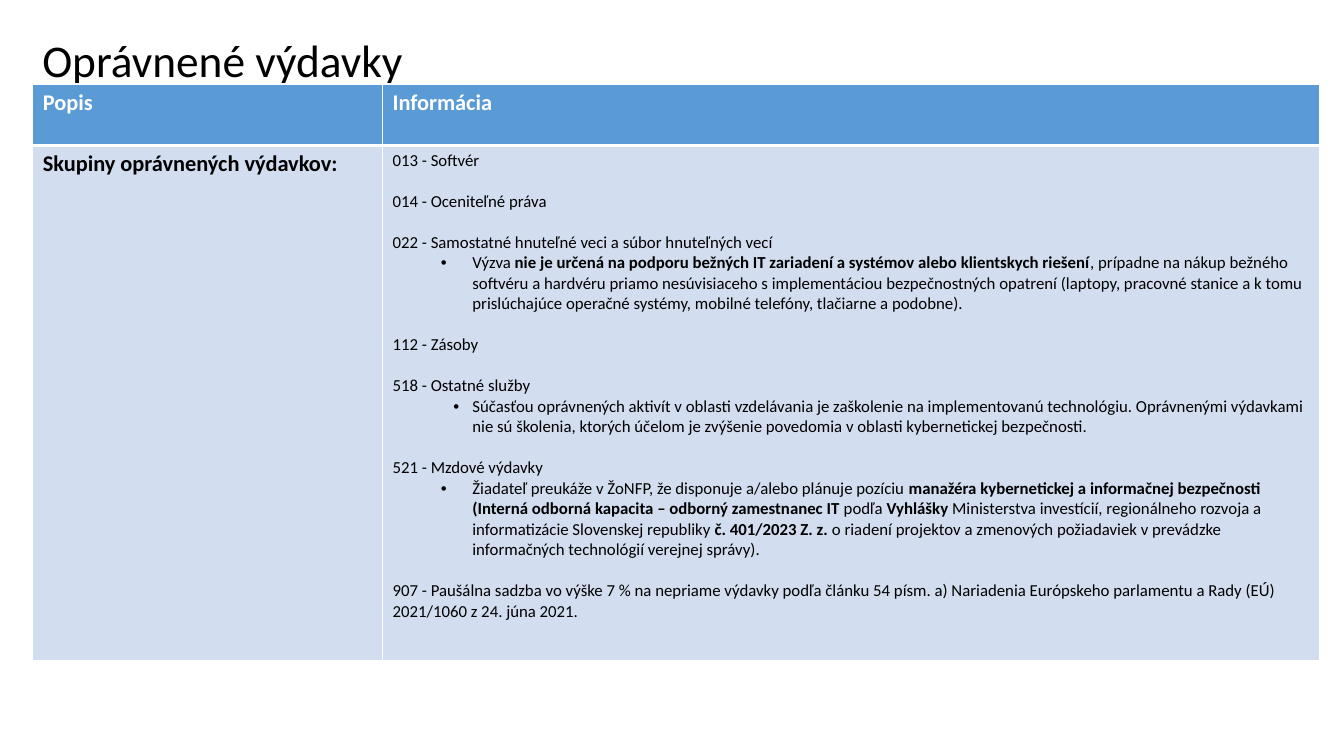
from lxml import etree
from pptx import Presentation
from pptx.dml.color import RGBColor
from pptx.enum.text import MSO_ANCHOR, PP_ALIGN
from pptx.oxml.ns import qn
from pptx.util import Pt

MIDDLE = MSO_ANCHOR.MIDDLE
LEFT = PP_ALIGN.LEFT
JUSTIFY = PP_ALIGN.JUSTIFY
TITLE_ONLY = 5
FONT = "Calibri"
COLOURS = {"black": "000000", "white": "FFFFFF", "header": "5B9BD5", "body": "D2DEEF"}
BLANK_LINE = 14.65
WIDE_BULLET, NARROW_BULLET = 22.5, 13.5
BULLET_INDENT = 57

# Each expense group: heading, bullet hang, bullet spans as (text, bold).
EXPENSE_GROUPS = [
    ("013 - Softvér", 0, []),
    ("014 - Oceniteľné práva", 0, []),
    ("022 - Samostatné hnuteľné veci a súbor hnuteľných vecí", WIDE_BULLET, [
        ("Výzva ", False),
        ("nie je určená na podporu bežných IT zariadení a systémov alebo "
         "klientskych riešení", True),
        (", prípadne na nákup bežného softvéru a hardvéru priamo nesúvisiaceho "
         "s implementáciou bezpečnostných opatrení (laptopy, pracovné stanice a k tomu "
         "prislúchajúce operačné systémy, mobilné telefóny, tlačiarne a podobne).", False),
    ]),
    ("112 - Zásoby", 0, []),
    ("518 - Ostatné služby", NARROW_BULLET, [
        ("Súčasťou oprávnených aktivít v oblasti vzdelávania je zaškolenie na "
         "implementovanú technológiu. Oprávnenými výdavkami nie sú školenia, ktorých "
         "účelom je zvýšenie povedomia v oblasti kybernetickej bezpečnosti.", False),
    ]),
    ("521 - Mzdové výdavky", WIDE_BULLET, [
        ("Žiadateľ preukáže v ŽoNFP, že disponuje a/alebo plánuje pozíciu ", False),
        ("manažéra kybernetickej a informačnej bezpečnosti (Interná odborná kapacita – "
         "odborný zamestnanec IT ", True),
        ("podľa ", False),
        ("Vyhlášky", True),
        (" Ministerstva investícií, regionálneho rozvoja a informatizácie Slovenskej "
         "republiky ", False),
        ("č. 401/2023 Z. z. ", True),
        ("o riadení projektov a zmenových požiadaviek v prevádzke informačných "
         "technológií verejnej správy).", False),
    ]),
    ("907 - Paušálna sadzba vo výške 7 % na nepriame výdavky podľa článku 54 písm. a) "
     "Nariadenia Európskeho parlamentu a Rady (EÚ) 2021/1060 z 24. júna 2021.", 0, []),
]


def colour(name):
    return RGBColor.from_string(COLOURS[name])


def write(para, spans, size, colour_name, align=LEFT):
    """Fill a paragraph with (text, bold) spans."""
    para.alignment = align
    para.font.name = FONT
    para.font.size = Pt(size)
    para.font.color.rgb = colour(colour_name)
    for text, bold in spans:
        span = para.add_run()
        span.text = text
        # Run-level settings take precedence over the table style.
        span.font.bold = bold
        span.font.name = FONT
        span.font.size = Pt(size)
        span.font.color.rgb = colour(colour_name)


def add_bullet(para, hang):
    properties = para._p.get_or_add_pPr()
    properties.set("marL", str(Pt(BULLET_INDENT)))
    properties.set("indent", str(-Pt(hang)))
    typeface = etree.SubElement(properties, qn("a:buFont"), typeface="Arial")
    typeface.addnext(etree.Element(qn("a:buChar"), char="•"))
    defaults = properties.find(qn("a:defRPr"))
    if defaults is not None:
        properties.append(defaults)


def style_cell(cell, fill, bottom_width=1):
    """Give a cell a solid fill and white borders."""
    cell.fill.solid()
    cell.fill.fore_color.rgb = colour(fill)
    properties = cell._tc.get_or_add_tcPr()
    widths = {"lnL": 1, "lnR": 1, "lnT": 1, "lnB": bottom_width}
    for place, (side, width) in enumerate(widths.items()):
        line = etree.Element(qn(f"a:{side}"), w=str(Pt(width)))
        solid = etree.SubElement(line, qn("a:solidFill"))
        etree.SubElement(solid, qn("a:srgbClr"), val=COLOURS["white"])
        properties.insert(place, line)


def set_title(page, text):
    title = page.shapes.title
    title.left, title.top, title.width, title.height = Pt(23), Pt(23), Pt(720), Pt(37)
    frame = title.text_frame
    frame.word_wrap = True
    frame.vertical_anchor = MIDDLE
    frame.margin_top, frame.margin_bottom = Pt(10), Pt(3.6)
    para = frame.paragraphs[0]
    para.line_spacing = 0.9
    write(para, [(text, False)], 32.4, "black")


def fill_expense_cell(cell):
    frame = cell.text_frame
    for number, (heading, hang, spans) in enumerate(EXPENSE_GROUPS):
        para = frame.add_paragraph() if number else frame.paragraphs[0]
        if number:
            para.space_before = Pt(BLANK_LINE)
        write(para, [(heading, False)], 12, "black")
        if spans:
            detail = frame.add_paragraph()
            write(detail, spans, 12, "black")
            add_bullet(detail, hang)


def add_expense_table(page):
    table = page.shapes.add_table(2, 2, Pt(23.4), Pt(60), Pt(919.5), Pt(412)).table
    for column, width in zip(table.columns, (249.8, 669.7)):
        column.width = Pt(width)
    for row, height in zip(table.rows, (43.9, 367.8)):
        row.height = Pt(height)
    table.horz_banding = False
    for column, heading in enumerate(("Popis", "Informácia")):
        header = table.cell(0, column)
        style_cell(header, "header", bottom_width=3)
        write(header.text_frame.paragraphs[0], [(heading, True)], 16, "white")
        style_cell(table.cell(1, column), "body")
    label = table.cell(1, 0).text_frame.paragraphs[0]
    write(label, [("Skupiny oprávnených výdavkov:", True)], 16, "black", JUSTIFY)
    fill_expense_cell(table.cell(1, 1))


def main():
    deck = Presentation()
    deck.slide_width, deck.slide_height = Pt(960), Pt(540)
    page = deck.slides.add_slide(deck.slide_layouts[TITLE_ONLY])
    set_title(page, "Oprávnené výdavky")
    add_expense_table(page)
    deck.save("out.pptx")


if __name__ == "__main__":
    main()
